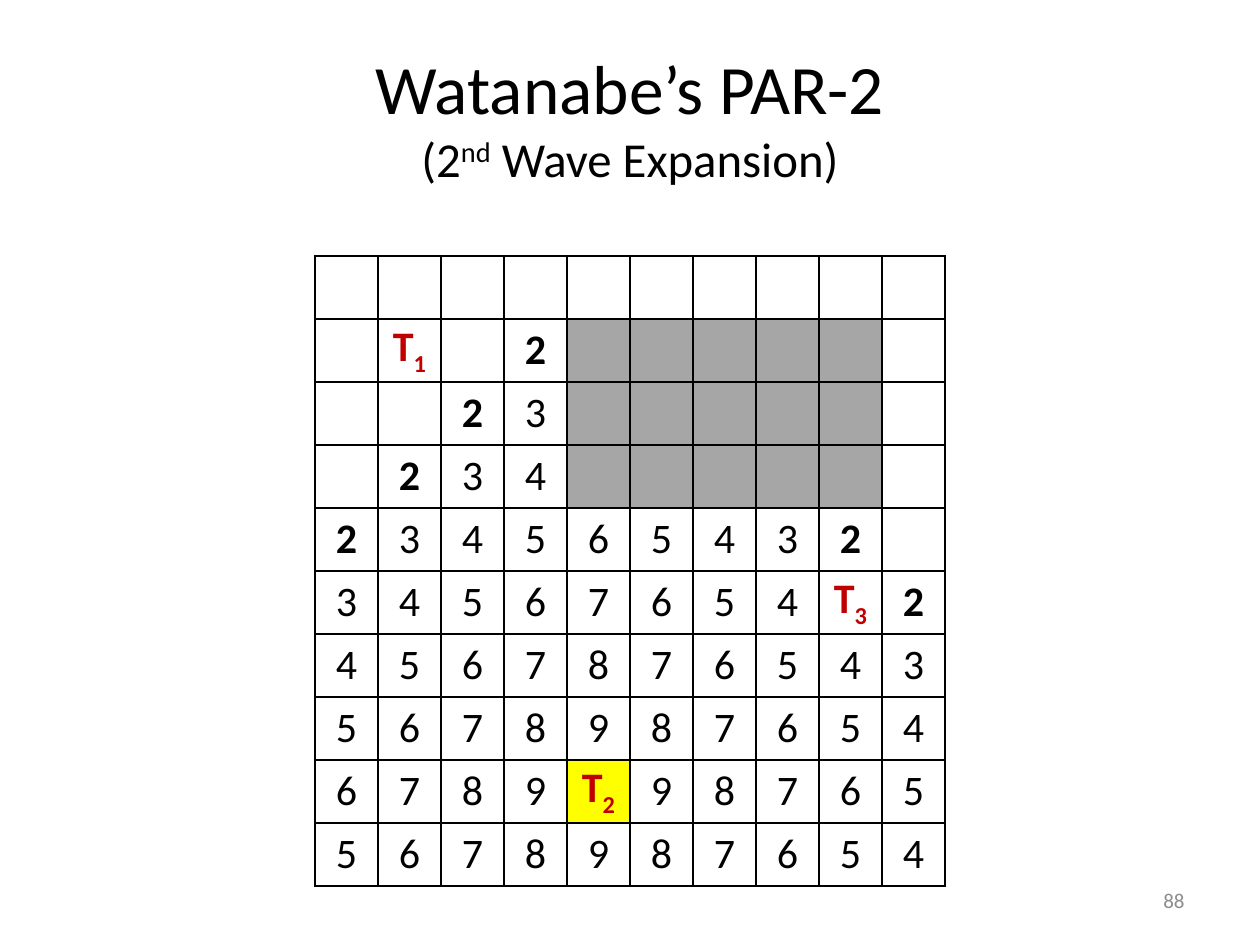
from lxml import etree
from pptx import Presentation
from pptx.dml.color import RGBColor
from pptx.enum.text import MSO_ANCHOR, PP_ALIGN
from pptx.oxml.ns import qn
from pptx.util import Cm, Pt

MIDDLE = MSO_ANCHOR.MIDDLE
CENTER, RIGHT = PP_ALIGN.CENTER, PP_ALIGN.RIGHT

FONT = "Calibri"
BLACK, WHITE, RED = "000000", "FFFFFF", "C00000"
GRAY, YELLOW, PAGE_GRAY = "A6A6A6", "FFFF00", "8C8C8C"
CELL_SIZE = Cm(1.27)

# "." is a free cell, "#" an obstacle, "T" with a digit a terminal
MAZE = [row.split() for row in (
    ". . . . . . . . . .",
    ". T1 . 2 # # # # # .",
    ". . 2 3 # # # # # .",
    ". 2 3 4 # # # # # .",
    "2 3 4 5 6 5 4 3 2 .",
    "3 4 5 6 7 6 5 4 T3 2",
    "4 5 6 7 8 7 6 5 4 3",
    "5 6 7 8 9 8 7 6 5 4",
    "6 7 8 9 T2 9 8 7 6 5",
    "5 6 7 8 9 8 7 6 5 4",
)]
FILLS = {"#": GRAY, "T2": YELLOW}
WAVE_FRONT = "2"


def rgb(value):
    return RGBColor.from_string(value)


def add_run(paragraph, text, size, color=BLACK, bold=False, baseline=0):
    """Baseline is a percentage: positive raises, negative lowers."""
    run = paragraph.add_run()
    run.text = text
    font = run.font
    font.name, font.size, font.bold = FONT, Pt(size), bold
    font.color.rgb = rgb(color)
    if baseline:
        run.font._element.set("baseline", str(baseline * 1000))


def add_text_area(slide, left, top, width, height, align):
    """Return the empty first paragraph of a new text box."""
    frame = slide.shapes.add_textbox(Cm(left), Cm(top), Cm(width), Cm(height)).text_frame
    frame.word_wrap = True
    frame.vertical_anchor = MIDDLE
    paragraph = frame.paragraphs[0]
    paragraph.alignment = align
    return paragraph


def add_title(slide):
    title = add_text_area(slide, 1.27, 0.76, 22.86, 3.18, CENTER)
    add_run(title, "Watanabe’s PAR-2", 39.6)
    title.add_line_break()
    add_run(title, "(2", 27.9)
    add_run(title, "nd", 27.9, baseline=30)
    add_run(title, " Wave Expansion)", 27.9)


def set_borders(cell, color, width):
    properties = cell._tc.get_or_add_tcPr()
    for side in ("a:lnL", "a:lnR", "a:lnT", "a:lnB"):
        line = etree.SubElement(properties, qn(side), w=str(Pt(width)))
        fill = etree.SubElement(line, qn("a:solidFill"))
        etree.SubElement(fill, qn("a:srgbClr"), val=color)


def fill_cell(cell, mark):
    set_borders(cell, BLACK, 1.5)
    cell.fill.solid()
    cell.fill.fore_color.rgb = rgb(FILLS.get(mark, WHITE))
    cell.margin_left = cell.margin_right = cell.margin_top = cell.margin_bottom = 0
    cell.vertical_anchor = MIDDLE
    paragraph = cell.text_frame.paragraphs[0]
    paragraph.alignment = CENTER
    if mark.startswith("T"):
        add_run(paragraph, "T", 24, RED, bold=True)
        add_run(paragraph, mark[1:], 24, RED, bold=True, baseline=-25)
    elif mark.isdigit():
        add_run(paragraph, mark, 24, bold=mark == WAVE_FRONT)


def add_maze(slide):
    row_count, column_count = len(MAZE), len(MAZE[0])
    maze = slide.shapes.add_table(
        row_count, column_count, Cm(6.35), Cm(5.16),
        CELL_SIZE * column_count, CELL_SIZE * row_count).table
    maze.first_row = maze.horz_banding = False
    for row, marks in enumerate(MAZE):
        for column, mark in enumerate(marks):
            fill_cell(maze.cell(row, column), mark)


def add_page_number(slide):
    add_run(add_text_area(slide, 18.2, 17.65, 5.93, 1.01, RIGHT), "88", 12, PAGE_GRAY)


def main():
    presentation = Presentation()
    presentation.slide_width, presentation.slide_height = Cm(25.4), Cm(19.05)
    slide = presentation.slides.add_slide(presentation.slide_layouts[6])
    add_title(slide)
    add_maze(slide)
    add_page_number(slide)
    presentation.save("out.pptx")


if __name__ == "__main__":
    main()
